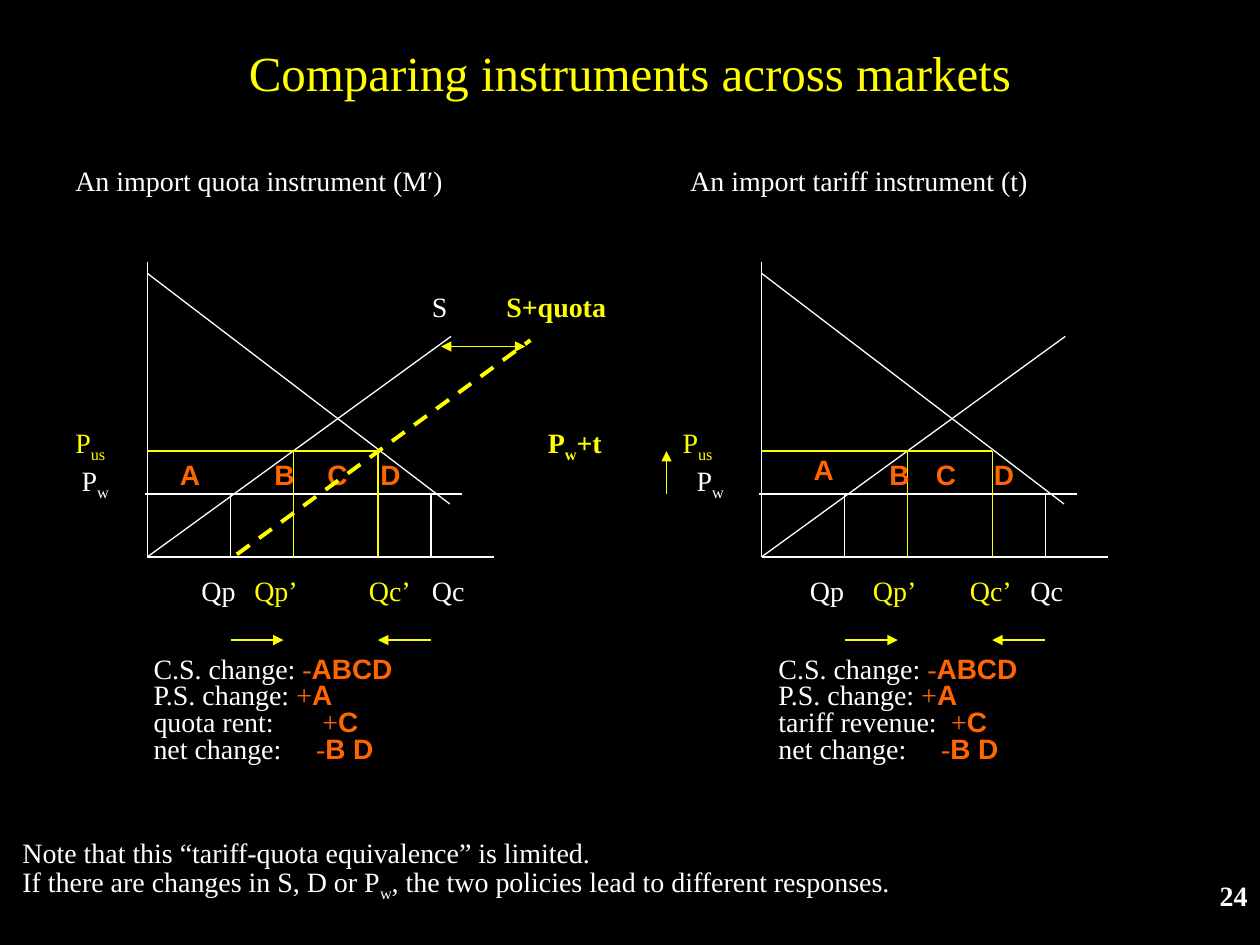
from lxml import etree
from pptx import Presentation
from pptx.dml.color import RGBColor
from pptx.enum.dml import MSO_LINE
from pptx.enum.shapes import MSO_CONNECTOR
from pptx.enum.text import MSO_ANCHOR, MSO_AUTO_SIZE, PP_ALIGN
from pptx.oxml.ns import qn
from pptx.util import Inches, Pt

BLACK = RGBColor(0x00, 0x00, 0x00)
WHITE = RGBColor(0xFF, 0xFF, 0xFF)
YELLOW = RGBColor(0xFF, 0xFF, 0x00)
ORANGE = RGBColor(0xFF, 0x66, 0x00)
SERIF, SANS = "Times New Roman", "Arial"

# Run styles: font, colour, bold, baseline shift in percent
PLAIN = (SERIF, WHITE, False, 0)
PLAIN_SUB = (SERIF, WHITE, False, -25)
PLAIN_BOLD = (SERIF, WHITE, True, 0)
POLICY = (SERIF, YELLOW, False, 0)
POLICY_SUB = (SERIF, YELLOW, False, -25)
POLICY_BOLD = (SERIF, YELLOW, True, 0)
POLICY_BOLD_SUB = (SERIF, YELLOW, True, -25)
SIGN = (SERIF, ORANGE, False, 0)
AREA = (SANS, ORANGE, True, 0)

TITLE = "Comparing instruments across markets"
PAGE_NUMBER = "24"
NOTE = [
    ("Note that this “tariff-quota equivalence” is limited.", PLAIN),
    "break",
    ("If there are changes in S, D or P", PLAIN), ("w", PLAIN_SUB),
    (", the two policies lead to different responses.", PLAIN),
]
WORLD_PRICE = [("P", PLAIN), ("w", PLAIN_SUB)]
US_PRICE = [("P", POLICY), ("us", POLICY_SUB)]
TARIFF_PRICE = [("P", POLICY_BOLD), ("w", POLICY_BOLD_SUB), ("+t", POLICY_BOLD)]

# Diagram levels, shared by both panels
TOP, US_LEVEL, WORLD_LEVEL, BASE, SHIFT_LEVEL = 2.08, 3.58, 3.92, 4.42, 5.08
# Diagram positions in the left panel
AXIS, QP, QP_NEW, QC_NEW, QC = 1.17, 1.83, 2.33, 3.0, 3.42
PANEL_STEP = 39 / 8

# from x, from y, to x, to y, colour
DIAGRAM = [
    (AXIS, TOP, AXIS, BASE, WHITE),
    (AXIS, BASE, 3.92, BASE, WHITE),
    (AXIS, BASE, 3.58, 2.67, WHITE),
    (AXIS, 2.17, 3.57, 4.0, WHITE),
    (1.15, WORLD_LEVEL, 3.67, WORLD_LEVEL, WHITE),
    (QP, WORLD_LEVEL, QP, BASE, WHITE),
    (QC, WORLD_LEVEL, QC, BASE, WHITE),
    (AXIS, US_LEVEL, QC_NEW, US_LEVEL, YELLOW),
    (QP_NEW, US_LEVEL, QP_NEW, BASE, YELLOW),
    (QC_NEW, US_LEVEL, QC_NEW, BASE, YELLOW),
]
QUANTITY_SHIFTS = [(QP, 2.25), (QC, QC_NEW)]

QUANTITIES = [("Qp", 0.48, PLAIN), ("Qp’", 0.55, POLICY),
              ("Qc’", 0.54, POLICY), ("Qc", 0.46, PLAIN)]
PANELS = [
    {
        "heading": "An import quota instrument (M′)", "heading_at": (0.5, 3.16),
        "areas": [(1.33, 3.58), (2.08, 3.58), (2.5, 3.58), (2.92, 3.58)],
        "quantities": [1.5, 1.92, 2.83, 3.33],
        "us_price": 0.5, "world_price": 0.55, "welfare": 1.12,
        "third": ("quota rent:", 1.34),
    },
    {
        "heading": "An import tariff instrument (t)", "heading_at": (5.38, 2.93),
        "areas": [(6.36, 3.54), (6.96, 3.58), (7.33, 3.58), (7.79, 3.58)],
        "quantities": [6.33, 6.83, 7.6, 8.08],
        "us_price": 5.32, "world_price": 5.43, "welfare": 6.08,
        "third": ("tariff revenue:", 1.37),
    },
]


def add_text(page, left, top, width, paras, height=0.37, wrap=False, size=16,
             spacing=None, align=PP_ALIGN.LEFT, anchor=MSO_ANCHOR.TOP, fit=True):
    """Add a text box; each paragraph is a list of (text, style) or "break"."""
    box = page.shapes.add_textbox(Inches(left), Inches(top), Inches(width), Inches(height))
    frame = box.text_frame
    frame.word_wrap = wrap
    frame.auto_size = MSO_AUTO_SIZE.SHAPE_TO_FIT_TEXT if fit else MSO_AUTO_SIZE.NONE
    frame.vertical_anchor = anchor
    for index, spans in enumerate(paras):
        para = frame.paragraphs[0] if index == 0 else frame.add_paragraph()
        para.alignment = align
        if spacing:
            para.line_spacing = spacing
        for item in spans:
            if item == "break":
                para.add_line_break()
                continue
            text, (font, colour, bold, baseline) = item
            span = para.add_run()
            span.text = text
            span.font.name = font
            span.font.size = Pt(size)
            span.font.bold = bold
            span.font.color.rgb = colour
            if baseline:
                span.font._element.set("baseline", str(baseline * 1000))
    return box


def add_line(page, x1, y1, x2, y2, colour, weight=0.75, arrows=()):
    line = page.shapes.add_connector(
        MSO_CONNECTOR.STRAIGHT, Inches(x1), Inches(y1), Inches(x2), Inches(y2))
    line.line.color.rgb = colour
    line.line.width = Pt(weight)
    outline = line.line._get_or_add_ln()
    for end in arrows:
        etree.SubElement(outline, qn("a:" + end), type="triangle")
    etree.SubElement(line._element.spPr, qn("a:effectLst"))
    return line


def add_tab_stop(para, position):
    stops = etree.SubElement(para._p.get_or_add_pPr(), qn("a:tabLst"))
    etree.SubElement(stops, qn("a:tab"), pos=str(Inches(position)), algn="l")


def add_welfare(page, left, third, third_stop):
    rows = [("C.S. change: ", "-", "ABCD", None), ("P.S. change: ", "+", "A", None),
            (third + "\t", "+", "C", third_stop), ("net change:\t", "-", "B D", 1.29)]
    paras = [[(label, PLAIN), (sign, SIGN), (area, AREA)] for label, sign, area, _ in rows]
    box = add_text(page, left, 5.17, 2.12, paras, height=0.96, spacing=0.8)
    for para, row in zip(box.text_frame.paragraphs, rows):
        if row[3]:
            add_tab_stop(para, row[3])


def add_panel(page, panel, shift):
    for x1, y1, x2, y2, colour in DIAGRAM:
        add_line(page, x1 + shift, y1, x2 + shift, y2, colour)
    for start, end in QUANTITY_SHIFTS:
        add_line(page, start + shift, SHIFT_LEVEL, end + shift, SHIFT_LEVEL,
                 YELLOW, arrows=["tailEnd"])
    left, width = panel["heading_at"]
    add_text(page, left, 1.25, width, [[(panel["heading"], PLAIN)]])
    add_text(page, panel["us_price"], 3.33, 0.46, [US_PRICE])
    add_text(page, panel["world_price"], 3.63, 0.44, [WORLD_PRICE])
    for letter, (left, top) in zip("ABCD", panel["areas"]):
        add_text(page, left, top, 0.36, [[(letter, AREA)]])
    for (label, width, style), left in zip(QUANTITIES, panel["quantities"]):
        add_text(page, left, 4.5, width, [[(label, style)]])
    add_welfare(page, panel["welfare"], *panel["third"])


def main():
    deck = Presentation()
    deck.slide_width, deck.slide_height = Inches(10), Inches(7.5)
    page = deck.slides.add_slide(deck.slide_layouts[6])
    page.background.fill.solid()
    page.background.fill.fore_color.rgb = BLACK

    add_text(page, 0, 0, 10, [[(TITLE, POLICY)]], height=1.25, wrap=True, size=28,
             spacing=0.7, align=PP_ALIGN.CENTER, anchor=MSO_ANCHOR.MIDDLE, fit=False)
    for index, panel in enumerate(PANELS):
        add_panel(page, panel, index * PANEL_STEP)

    # Quota: supply shifts to the right
    add_text(page, 3.33, 2.25, 0.6, [[("S", PLAIN)]], wrap=True)
    add_text(page, 3.92, 2.25, 2.08, [[("S+quota", POLICY_BOLD)]], wrap=True)
    shifted_supply = add_line(page, 1.88, 4.4, 4.21, 2.7, YELLOW, weight=2.25)
    shifted_supply.line.dash_style = MSO_LINE.DASH
    add_line(page, 3.5, 2.75, 4.17, 2.75, YELLOW, arrows=["headEnd", "tailEnd"])

    # Tariff: price rises
    add_text(page, 4.25, 3.33, 0.65, [TARIFF_PRICE])
    add_line(page, 5.29, US_LEVEL, 5.29, WORLD_LEVEL, YELLOW, arrows=["headEnd"])

    add_text(page, 0.08, 6.63, 9.58, [NOTE], height=0.53, wrap=True, spacing=0.8)
    add_text(page, 8.75, 6.92, 1.25, [[(PAGE_NUMBER, PLAIN_BOLD)]], height=0.33,
             wrap=True, align=PP_ALIGN.RIGHT, fit=False)
    deck.save("out.pptx")


if __name__ == "__main__":
    main()
